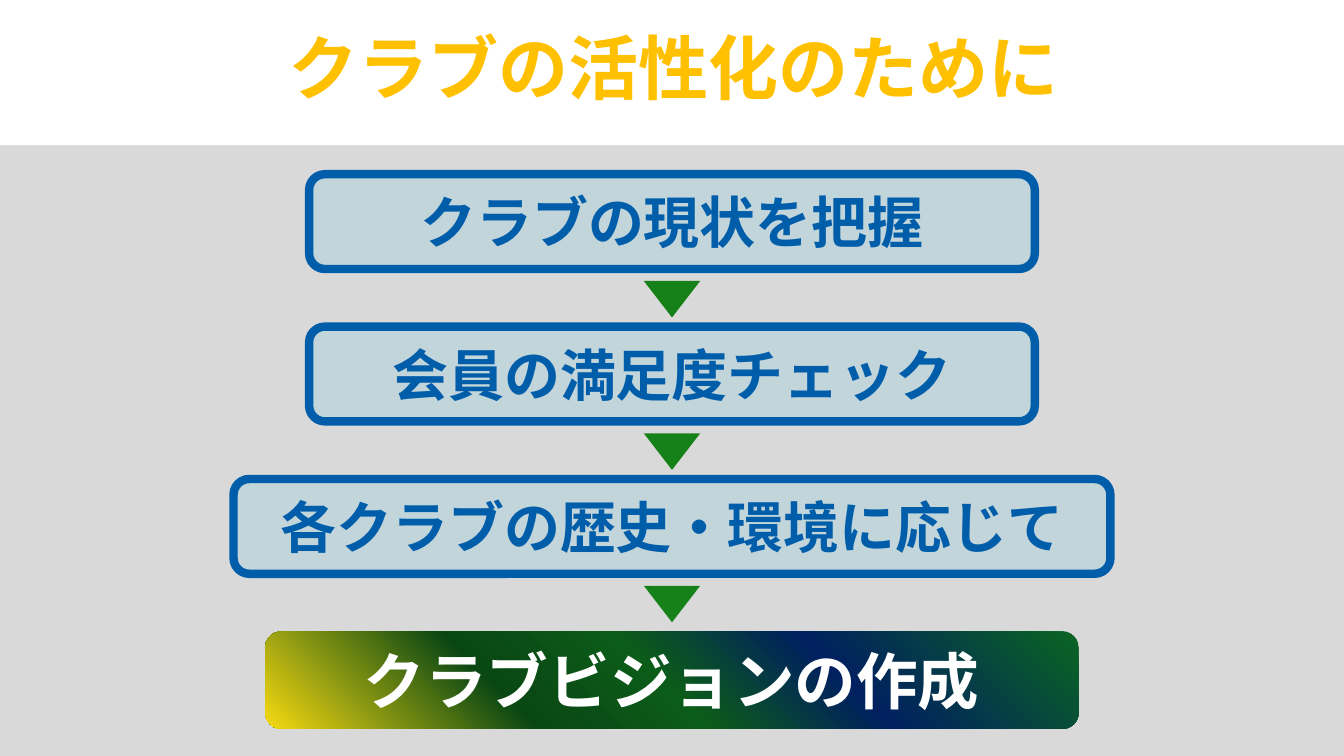
from lxml.etree import SubElement
from pptx import Presentation
from pptx.dml.color import RGBColor
from pptx.enum.shapes import MSO_SHAPE
from pptx.enum.text import MSO_ANCHOR, PP_ALIGN
from pptx.oxml.ns import qn
from pptx.util import Cm, Pt

SLIDE_WIDTH, SLIDE_HEIGHT = 33.87, 19.05
FONT = "Noto Sans CJK JP"
BLUE, GOLD, GREEN, WHITE, GREY, CYAN = (
    "005DAA", "FFC000", "158118", "FFFFFF", "D9D9D9", "01B4E7")
VISION_STOPS = [(1, "EFD511"), (30, "094713"), (49, "0C5C19"),
                (69, "002060"), (100, "0B6523")]


def paint(fill, color):
    fill.solid()
    fill.fore_color.rgb = RGBColor.from_string(color)


class FlowSlide:
    def __init__(self, deck):
        self.slide = deck.slides.add_slide(deck.slide_layouts[5])
        paint(self.slide.background.fill, GREY)

    def block(self, kind, top, width, height, color):
        block = self.slide.shapes.add_shape(
            kind, Cm((SLIDE_WIDTH - width) / 2), Cm(top), Cm(width), Cm(height))
        block.shadow.inherit = False
        block.line.fill.background()
        paint(block.fill, color)
        return block

    def label(self, holder, wording, size, color):
        frame = holder.text_frame
        frame.word_wrap = True
        frame.vertical_anchor = MSO_ANCHOR.MIDDLE
        frame.margin_left = frame.margin_right = 0
        frame.margin_top = frame.margin_bottom = 0
        frame.text = wording
        paragraph = frame.paragraphs[0]
        paragraph.alignment = PP_ALIGN.CENTER
        font = paragraph.font
        font.size, font.bold, font.name = Pt(size), True, FONT
        font.color.rgb = RGBColor.from_string(color)
        defaults = paragraph._p.pPr.find(qn("a:defRPr"))
        SubElement(defaults, qn("a:ea"), typeface=FONT)

    def heading(self, wording):
        self.block(MSO_SHAPE.RECTANGLE, 0, SLIDE_WIDTH, 3.66, WHITE)
        title = self.slide.shapes.title
        title.left, title.top, title.width, title.height = (
            Cm(5.64), Cm(0.48), Cm(22.7), Cm(2.39))
        self.label(title, wording, 50, GOLD)
        self.slide.shapes._spTree.append(title._element)

    def step(self, wording, top, width):
        step = self.block(MSO_SHAPE.ROUNDED_RECTANGLE, top, width, 2.39, CYAN)
        tint = step._element.spPr.find(qn("a:solidFill"))[0]
        SubElement(tint, qn("a:alpha"), val="10000")
        paint(step.line.fill, BLUE)
        step.line.width = Pt(6)
        self.label(step, wording, 40, BLUE)

    def arrow(self, top):
        arrow = self.block(MSO_SHAPE.ISOSCELES_TRIANGLE, top, 1.42, 0.92, GREEN)
        arrow.rotation = 180

    def vision(self, wording, top):
        vision = self.block(MSO_SHAPE.ROUNDED_RECTANGLE, top, 20.5, 2.46, GREEN)
        vision.fill.gradient()
        gradient = vision._element.spPr.find(qn("a:gradFill"))
        for part in list(gradient):
            gradient.remove(part)
        stops = SubElement(gradient, qn("a:gsLst"))
        for percent, color in VISION_STOPS:
            stop = SubElement(stops, qn("a:gs"), pos=str(percent * 1000))
            SubElement(stop, qn("a:srgbClr"), val=color)
        circle = SubElement(gradient, qn("a:path"), {"path": "circle"})
        SubElement(circle, qn("a:fillToRect"), t="100000", r="100000")
        self.label(vision, wording, 44, WHITE)


def main():
    deck = Presentation()
    deck.slide_width, deck.slide_height = Cm(SLIDE_WIDTH), Cm(SLIDE_HEIGHT)
    flow = FlowSlide(deck)
    flow.heading("クラブの活性化のために")
    steps = [("クラブの現状を把握", 18.29),
             ("会員の満足度チェック", 18.29),
             ("各クラブの歴史・環境に応じて", 22.1)]
    first_top, pitch, arrow_drop = 4.39, 3.84, 2.69
    for index, (wording, width) in enumerate(steps):
        top = first_top + index * pitch
        flow.step(wording, top, width)
        flow.arrow(top + arrow_drop)
    flow.vision("クラブビジョンの作成", first_top + len(steps) * pitch)
    deck.save("out.pptx")


if __name__ == "__main__":
    main()
